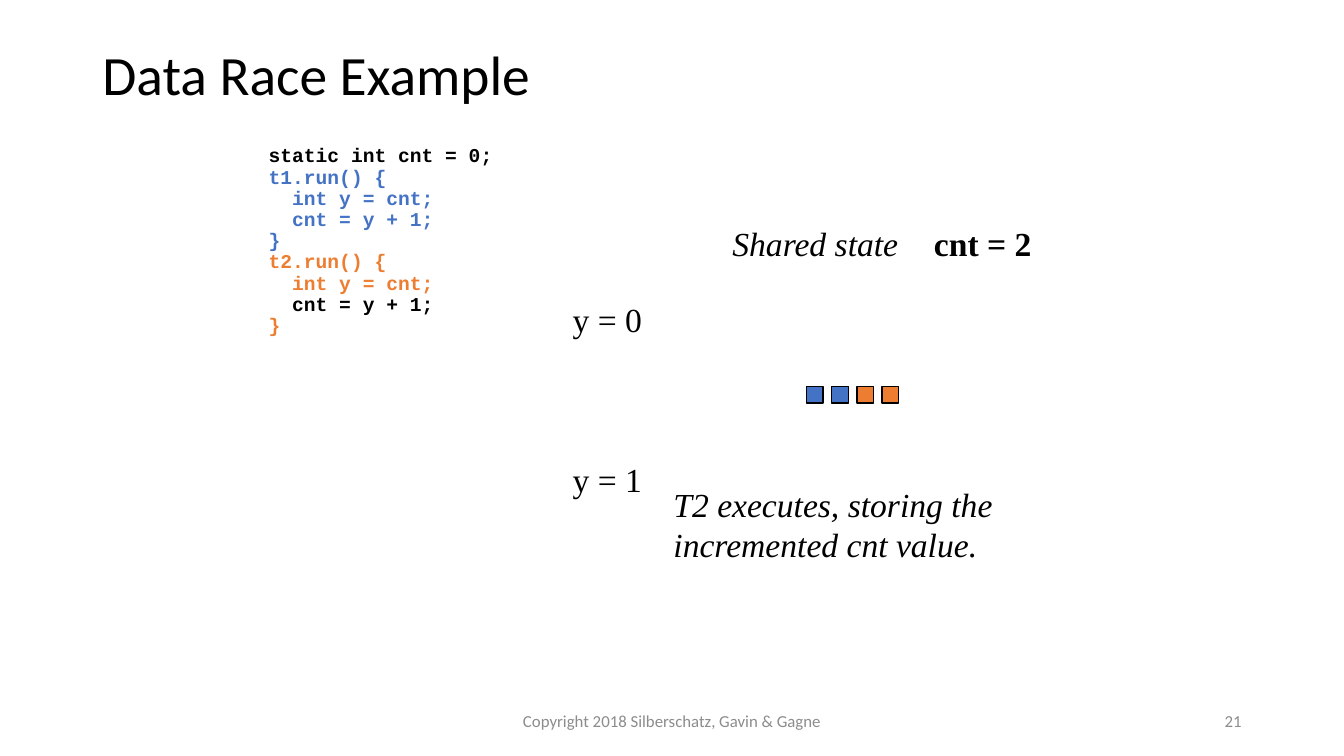
import pptx
import pptx.dml.color
import pptx.enum.shapes
import pptx.enum.text
import pptx.util

BLACK = pptx.dml.color.RGBColor(0x00, 0x00, 0x00)
BLUE = pptx.dml.color.RGBColor(0x44, 0x72, 0xC4)
ORANGE = pptx.dml.color.RGBColor(0xED, 0x7D, 0x31)
GRAY = pptx.dml.color.RGBColor(0x8C, 0x8C, 0x8C)
ALIGN = pptx.enum.text.PP_ALIGN
ANCHOR = pptx.enum.text.MSO_ANCHOR

COLUMNS, ROWS = 160, 90
presentation = pptx.Presentation()
presentation.slide_width = pptx.util.Inches(13.33)
presentation.slide_height = pptx.util.Inches(7.5)
slide = presentation.slides.add_slide(presentation.slide_layouts[6])


def place(left, top, width, height):
    column = presentation.slide_width / COLUMNS
    row = presentation.slide_height / ROWS
    return [round(left * column), round(top * row), round(width * column), round(height * row)]


def add_text(box, text, font, size, color=BLACK, align=ALIGN.LEFT, anchor=ANCHOR.TOP,
             wrap=True, spacing=1.0, bold=False, italic=False):
    text_frame = slide.shapes.add_textbox(*place(*box)).text_frame
    text_frame.word_wrap = wrap
    text_frame.vertical_anchor = anchor
    text_frame.text = text
    for paragraph in text_frame.paragraphs:
        paragraph.alignment = align
        paragraph.line_spacing = spacing
        for run in paragraph.runs:
            run.font.name = font
            run.font.size = pptx.util.Pt(size)
            run.font.color.rgb = color
            run.font.bold = bold
            run.font.italic = italic
    return text_frame


add_text((11, 4.8, 138, 8.64), "Data Race Example", "Calibri", 39.6,
         anchor=ANCHOR.BOTTOM, spacing=0.9)

code_lines = [
    ("static int cnt = 0;", BLACK),
    ("t1.run() {", BLUE),
    ("  int y = cnt;", BLUE),
    ("  cnt = y + 1;", BLUE),
    ("}", BLUE),
    ("t2.run() {", ORANGE),
    ("  int y = cnt;", ORANGE),
    ("  cnt = y + 1;", BLACK),
    ("}", ORANGE),
]
code = add_text((30.8, 16.8, 53.9, 58.8), "\n".join(line for line, color in code_lines),
                "Courier New", 14, spacing=0.9, bold=True)
for paragraph, (line, color) in zip(code.paragraphs, code_lines):
    paragraph.runs[0].font.color.rgb = color

notes = [
    ((110, 26, 14, 6), "cnt = 2", True, False),
    ((79, 57, 40.8, 10.9), "T2 executes, storing the\nincremented cnt value.", False, True),
    ((86, 26, 22.3, 6), "Shared state", False, True),
    ((67, 35, 10.7, 6), "y = 0", False, False),
    ((67, 54, 10.7, 6), "y = 1", False, False),
]
for box, text, bold, italic in notes:
    add_text(box, text, "Times New Roman", 24, wrap=False, bold=bold, italic=italic)

for step, color in enumerate([BLUE, BLUE, ORANGE, ORANGE]):
    square = slide.shapes.add_shape(pptx.enum.shapes.MSO_SHAPE.RECTANGLE,
                                    *place(96 + 3 * step, 46, 2, 2))
    square.shadow.inherit = False
    square.fill.solid()
    square.fill.fore_color.rgb = color
    square.line.color.rgb = BLACK
    square.line.width = pptx.util.Pt(1)

footers = [
    (53, 54, "Copyright 2018 Silberschatz, Gavin & Gagne", ALIGN.CENTER),
    (113, 36, "21", ALIGN.RIGHT),
]
for left, width, text, align in footers:
    add_text((left, 83.4, width, 4.8), text, "Calibri", 12, GRAY, align, ANCHOR.MIDDLE)

presentation.save("out.pptx")
